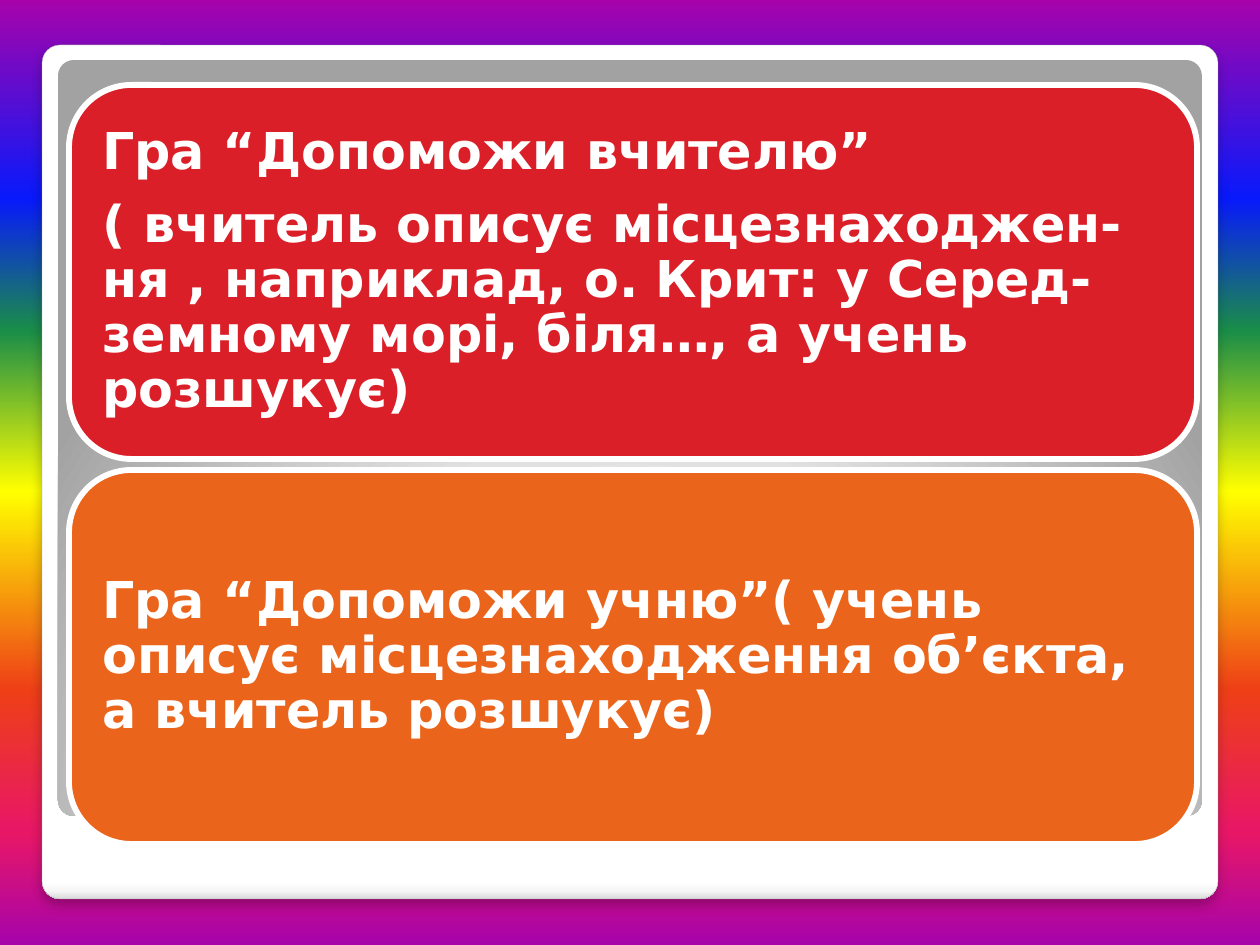
import pptx
import pptx.util
import pptx.oxml
import pptx.oxml.ns
import pptx.dml.color
import pptx.enum.shapes
import pptx.enum.text

RGB = pptx.dml.color.RGBColor
WHITE = RGB(255, 255, 255)
RED = RGB(0xDA, 0x1F, 0x28)
ORANGE = RGB(0xEB, 0x64, 0x1B)
GREY = RGB(0xA4, 0xA4, 0xA4)
PALE = RGB(0xE1, 0xE1, 0xE1)
DARK = RGB(0xA2, 0xA2, 0xA2)
EDGE = RGB(0xDA, 0xDA, 0xDA)
NEAR = RGB(0xF7, 0xF7, 0xF7)
PURPLE = RGB(0xA6, 0x03, 0xAB)
RAINBOW = [
    (0, PURPLE), (21, RGB(0x08, 0x19, 0xFB)), (35, RGB(0x1A, 0x8D, 0x48)),
    (52, RGB(255, 255, 0)), (73, RGB(0xEE, 0x3F, 0x17)),
    (88, RGB(0xE8, 0x17, 0x66)), (100, PURPLE),
]
DOWN = '<a:lin {} ang="5400000" scaled="0"/>'
GLOW = ('<a:path {} path="circle">'
        '<a:fillToRect l="50000" t="175000" r="50000" b="-75000"/></a:path>')


def px(count):
    return pptx.util.Emu(round(count * 914400 / 126))


def parse(xml):
    return pptx.oxml.parse_xml(xml.format(pptx.oxml.ns.nsdecls("a")))


class Deck:
    font = "DejaVu Sans"
    size = pptx.util.Pt(29)

    def __init__(self):
        self.file = pptx.Presentation()
        self.file.slide_width = px(1260)
        self.file.slide_height = px(945)
        self.slide = self.file.slides.add_slide(self.file.slide_layouts[6])

    def blend(self, owner, fill, stops, course):
        """Give a fill any number of colour stops and a course."""
        fill.gradient()
        grad = owner.find(".//" + pptx.oxml.ns.qn("a:gradFill"))
        grad.clear()
        marks = "".join(
            f'<a:gs pos="{spot * 1000}"><a:srgbClr val="{tone}"/></a:gs>'
            for spot, tone in stops)
        grad.append(parse("<a:gsLst {}>" + marks + "</a:gsLst>"))
        grad.append(parse(course))

    def ground(self, stops):
        self.blend(self.slide.element, self.slide.background.fill, stops, DOWN)

    def box(self, left, top, width, height, bend=None):
        shape = self.slide.shapes.add_shape(
            pptx.enum.shapes.MSO_SHAPE.ROUNDED_RECTANGLE,
            px(left), px(top), px(width), px(height))
        shape.shadow.inherit = False
        if bend is not None:
            shape.adjustments[0] = bend
        return shape

    def panel(self, place, stops, course):
        shape = self.box(*place, bend=0.021)
        self.blend(shape.element, shape.fill, stops, course)
        shape.line.fill.background()
        return shape

    def line(self, shape, tone, width):
        shape.line.color.rgb = tone
        shape.line.width = pptx.util.Pt(width)

    def shade(self, shape):
        effect = shape.element.find(".//" + pptx.oxml.ns.qn("a:effectLst"))
        effect.append(parse(
            '<a:outerShdw {} blurRad="76200" dist="50800" dir="5400000" '
            'algn="t" rotWithShape="0"><a:srgbClr val="000000">'
            '<a:alpha val="25000"/></a:srgbClr></a:outerShdw>'))

    def card(self, place, tone, lines):
        shape = self.box(*place)
        shape.fill.solid()
        shape.fill.fore_color.rgb = tone
        self.line(shape, WHITE, 3.35)
        frame = shape.text_frame
        frame.word_wrap = True
        frame.vertical_anchor = pptx.enum.text.MSO_ANCHOR.MIDDLE
        frame.margin_left = frame.margin_right = px(15)
        frame.margin_top = frame.margin_bottom = px(15)
        frame.text = "\n".join(lines)
        for para in frame.paragraphs:
            para.alignment = pptx.enum.text.PP_ALIGN.LEFT
            para.line_spacing = 0.9
            para.space_after = pptx.util.Pt(10.5)
            para.font.name = self.font
            para.font.size = self.size
            para.font.bold = True
            para.font.color.rgb = WHITE


def main():
    deck = Deck()
    deck.ground(RAINBOW)

    # White frame and grey panel
    frame = deck.panel((42, 45, 1176, 854),
                       [(0, WHITE), (98, WHITE), (99, NEAR), (100, EDGE)], DOWN)
    deck.line(frame, GREY, 0.16)
    deck.shade(frame)
    deck.panel((58, 60, 1144, 756), [(0, WHITE), (55, PALE), (100, DARK)], GLOW)

    # Game cards
    cards = [
        (RED, ["Гра “Допоможи вчителю”",
               "( вчитель описує місцезнаходжен- ня , наприклад, о. Крит: "
               "у Серед- земному морі, біля…, а учень розшукує)"]),
        (ORANGE, ["Гра “Допоможи учню”( учень описує місцезнаходження "
                  "об’єкта, а вчитель розшукує)"]),
    ]
    for row, (tone, lines) in enumerate(cards):
        deck.card((69, 85 + row * 385, 1128, 374), tone, lines)

    deck.file.save("out.pptx")


if __name__ == "__main__":
    main()
